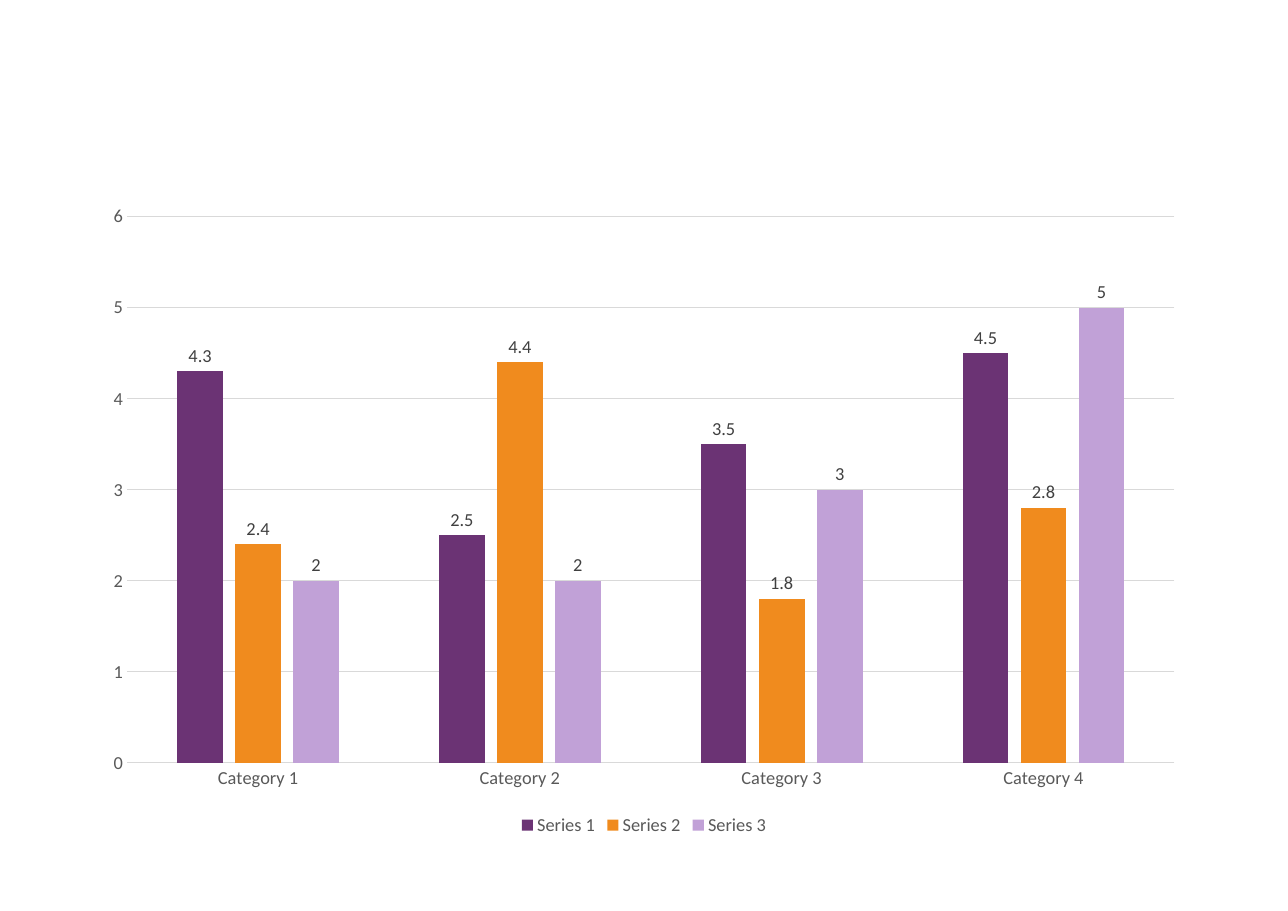
from dataclasses import dataclass
from typing import Any

from pptx import Presentation
from pptx.chart.data import CategoryChartData
from pptx.dml.color import RGBColor
from pptx.enum.chart import XL_CHART_TYPE as ChartType
from pptx.enum.chart import XL_LABEL_POSITION as LabelPosition
from pptx.enum.chart import XL_LEGEND_POSITION as LegendPosition
from pptx.enum.chart import XL_TICK_MARK as TickMark
from pptx.util import Emu, Pt

EMU_PER_PX = 9144
COLOURS = {
    "purple": "6B3374",
    "orange": "F08B1E",
    "lilac": "C1A1D7",
    "axis_text": "595959",
    "label_text": "404040",
    "rule": "D9D9D9",
}
CATEGORIES = [f"Category {number}" for number in range(1, 5)]
FONT_FORMAT = {"name": "Calibri", "size": Pt(12), "bold": False}
AXIS_FORMAT = {"major_tick_mark": TickMark.NONE, "minor_tick_mark": TickMark.NONE}
VALUE_FORMAT = {
    "minimum_scale": 0,
    "maximum_scale": 6,
    "major_unit": 1,
    "has_major_gridlines": True,
}
LEGEND_FORMAT = {"position": LegendPosition.BOTTOM, "include_in_layout": False}
LABEL_FORMAT = {
    "show_value": True,
    "position": LabelPosition.OUTSIDE_END,
    "number_format": "General",
    "number_format_is_linked": False,
}
PLOT_FORMAT = {"gap_width": 219, "overlap": -27, "vary_by_categories": False}


@dataclass(frozen=True)
class ColumnSeries:
    name: str
    values: tuple[float, ...]
    colour: str


SERIES = [
    ColumnSeries("Series 1", (4.3, 2.5, 3.5, 4.5), "purple"),
    ColumnSeries("Series 2", (2.4, 4.4, 1.8, 2.8), "orange"),
    ColumnSeries("Series 3", (2, 2, 3, 5), "lilac"),
]


def px(length: int) -> Emu:
    return Emu(length * EMU_PER_PX)


def rgb(colour: str) -> RGBColor:
    return RGBColor.from_string(COLOURS[colour])


def apply_format(target: Any, values: dict[str, Any]) -> None:
    for name, value in values.items():
        setattr(target, name, value)


def style_font(font: Any, colour: str) -> None:
    apply_format(font, FONT_FORMAT)
    font.color.rgb = rgb(colour)


def style_rule(line: Any) -> None:
    line.color.rgb = rgb("rule")
    line.width = Pt(0.75)


def style_axes(chart: Any) -> None:
    for axis in (chart.category_axis, chart.value_axis):
        apply_format(axis, AXIS_FORMAT)
        style_font(axis.tick_labels.font, "axis_text")
    apply_format(chart.value_axis, VALUE_FORMAT)
    style_rule(chart.category_axis.format.line)
    style_rule(chart.value_axis.major_gridlines.format.line)
    chart.value_axis.format.line.fill.background()


def style_series(drawn: Any, series: ColumnSeries) -> None:
    drawn.invert_if_negative = False
    drawn.format.fill.solid()
    drawn.format.fill.fore_color.rgb = rgb(series.colour)
    apply_format(drawn.data_labels, LABEL_FORMAT)
    style_font(drawn.data_labels.font, "label_text")


def add_column_chart(page: Any, left: int, top: int, width: int, height: int) -> None:
    data = CategoryChartData()
    data.categories = CATEGORIES
    for series in SERIES:
        data.add_series(series.name, series.values)
    frame = page.shapes.add_chart(
        ChartType.COLUMN_CLUSTERED, px(left), px(top), px(width), px(height), data
    )
    chart = frame.chart
    chart.has_title = False
    chart.has_legend = True
    apply_format(chart.legend, LEGEND_FORMAT)
    style_font(chart.legend.font, "axis_text")
    style_axes(chart)
    plot = chart.plots[0]
    apply_format(plot, PLOT_FORMAT)
    for drawn, series in zip(plot.series, SERIES):
        style_series(drawn, series)


def main() -> None:
    deck = Presentation()
    apply_format(deck, {"slide_width": px(1169), "slide_height": px(827)})
    page = deck.slides.add_slide(deck.slide_layouts[6])
    add_column_chart(page, 83, 175, 1003, 588)
    deck.save("out.pptx")


if __name__ == "__main__":
    main()
